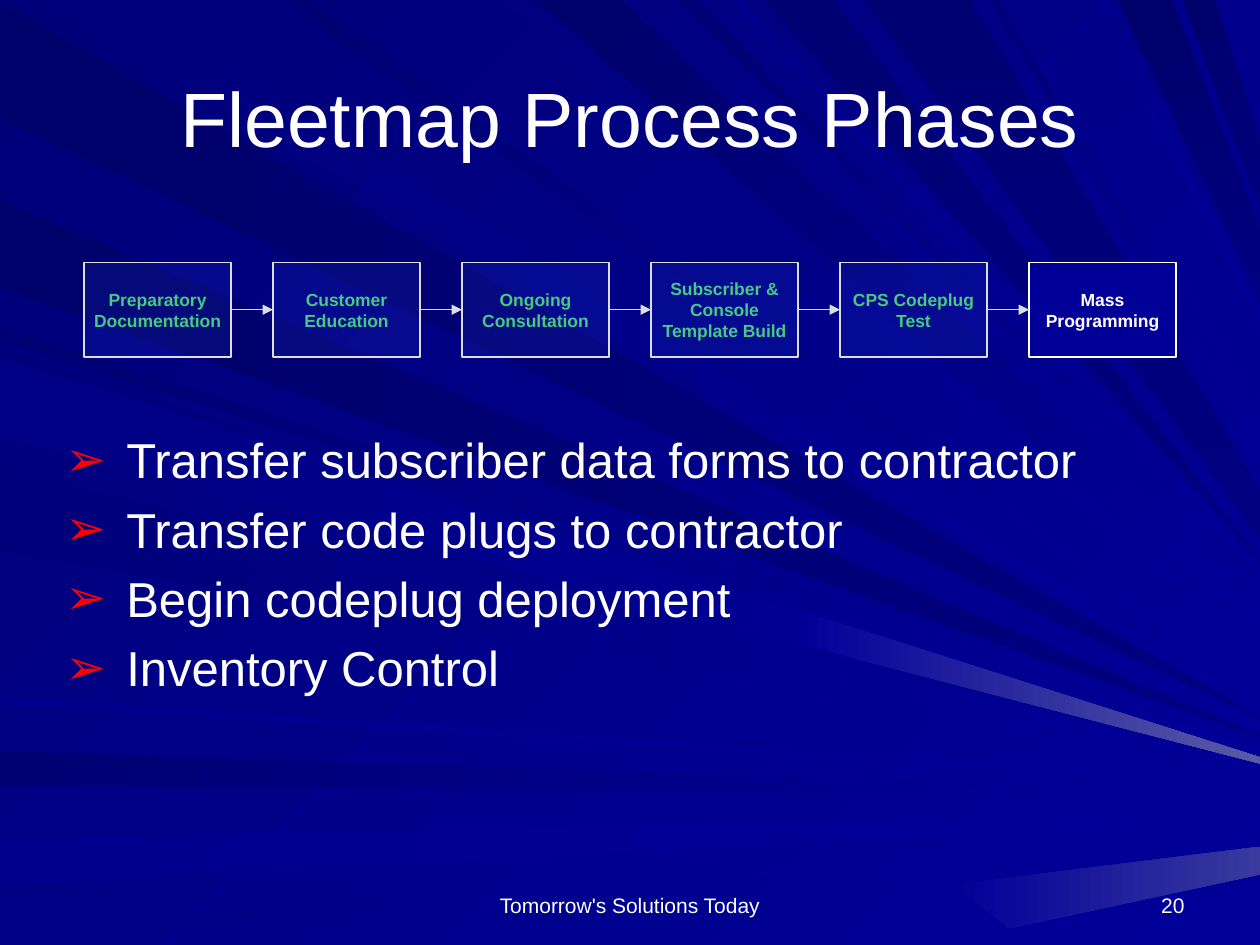
from itertools import pairwise

from lxml.etree import SubElement
from pptx import Presentation
from pptx.dml.color import RGBColor
from pptx.enum.shapes import MSO_CONNECTOR as Connector, MSO_SHAPE as Shape
from pptx.enum.text import MSO_ANCHOR as Anchor, MSO_AUTO_SIZE as AutoSize, PP_ALIGN as Align
from pptx.oxml.ns import qn
from pptx.util import Pt

COLORS = {
    "white": "FFFFFF",
    "edge": "DDDDDD",
    "phase_fill": "3366FF",
    "phase_text": "45C984",
    "bullet": "FF0000",
    "background": "000078",
    "darkest": "00006B",
    "dark": "000073",
    "deep": "00007B",
    "middle": "000080",
    "light": "000085",
    "lighter": "00008C",
    "bright": "000099",
    "glow_low": "39399E",
    "glow_high": "5A5AA6",
}
FONT = "Arial"
RAY_UNIT = Pt(0.72)
RIGHT = 1000

# Start and end on the slide's edge, tip on the right edge, tip height, colours
LEFT_RAYS = [
    (2, 93, 569, 1, "darkest", "middle"),
    (596, 623, 631, 1, "dark", "bright"),
    (665, 704, 643, 8, "lighter", "bright"),
    (735, 750, 662, 0, "light", "bright"),
    (258, 270, 589, 0, "dark", "bright"),
    (159, 228, 584, 1, "darkest", "middle"),
    (278, 342, 596, 6, "deep", "bright"),
    (374, 437, 605, 1, "deep", "bright"),
    (552, 560, 621, 2, "lighter", "bright"),
    (283, 347, 601, 5, "light", "bright"),
]
TOP_RAYS = [
    (26, 101, 562, 1, "deep", "bright"),
    (398, 416, 515, 6, "middle", "bright"),
    (426, 492, 479, 28, "darkest", "bright"),
    (540, 552, 463, 0, "dark", "bright"),
    (606, 661, 445, 1, "dark", "middle"),
    (887, 930, 183, 54, "darkest", "middle"),
    (939, 964, 114, 53, "darkest", "middle"),
    (225, 247, 547, 5, "dark", "bright"),
    (577, 588, 453, 1, "lighter", "bright"),
    (686, 770, 390, 38, "dark", "middle"),
    (785, 792, 354, 6, "background", "bright"),
    (815, 824, 335, 1, "light", "bright"),
    (865, 872, 249, 9, "lighter", "bright"),
]
GLOWS = [
    ([(637, 485), (633, 511), (RIGHT, 606), (RIGHT, 601)], "glow_high"),
    ([(756, 702), (801, 737), (RIGHT, 694), (RIGHT, 672)], "glow_low"),
]
PHASES = [
    "Preparatory Documentation",
    "Customer Education",
    "Ongoing Consultation",
    "Subscriber & Console Template Build",
    "CPS Codeplug Test",
    "Mass Programming",
]
STEPS = [
    "Transfer subscriber data forms to contractor",
    "Transfer code plugs to contractor",
    "Begin codeplug deployment",
    "Inventory Control",
]


def color(name):
    return RGBColor.from_string(COLORS[name])


def paint_gradient(fill, names, angle):
    fill.gradient()
    fill.gradient_angle = (360 - angle) % 360
    for stop, name in zip(fill.gradient_stops, names):
        stop.color.rgb = color(name)


def place(shape, left, top, width, height):
    shape.left, shape.top, shape.width, shape.height = map(Pt, (left, top, width, height))


def add_bullet(paragraph, symbol, indent):
    properties = paragraph._p.get_or_add_pPr()
    properties.set("marL", str(Pt(indent)))
    properties.set("indent", str(-Pt(indent)))
    bullet_color = SubElement(properties, qn("a:buClr"))
    SubElement(bullet_color, qn("a:srgbClr"), val=COLORS["bullet"])
    SubElement(properties, qn("a:buFont"), typeface=FONT)
    SubElement(properties, qn("a:buChar"), char=symbol)


def write_text(shape, lines, size=12, ink="white", bold=False, align=Align.LEFT,
               anchor=Anchor.TOP, bullet=None, gap=0):
    frame = shape.text_frame
    frame.word_wrap = True
    frame.auto_size = AutoSize.NONE
    frame.vertical_anchor = anchor
    frame.text = "\n".join(lines)
    for index, paragraph in enumerate(frame.paragraphs):
        paragraph.alignment = align
        paragraph.space_before = Pt(gap if index else 0)
        if bullet:
            add_bullet(paragraph, bullet, 35)
        font = paragraph.runs[0].font
        font.name, font.size, font.bold = FONT, Pt(size), bold
        font.color.rgb = color(ink)


def add_ray(group, outline, names, angle=0):
    builder = group.shapes.build_freeform(*outline[0], scale=RAY_UNIT)
    builder.add_line_segments(outline[1:], close=True)
    ray = builder.convert_to_shape()
    ray.shadow.inherit = False
    ray.line.fill.background()
    paint_gradient(ray.fill, names, angle)


def add_rays(slide):
    group = slide.shapes.add_group_shape()
    for start, end, tip, height, *names in LEFT_RAYS:
        add_ray(group, [(0, start), (0, end), (RIGHT, tip + height), (RIGHT, tip)], names)
    for start, end, tip, height, *names in TOP_RAYS:
        angle = 45 if names[-1] == "bright" else 90
        add_ray(group, [(start, 0), (end, 0), (RIGHT, tip), (RIGHT, tip + height)], names, angle)
    for outline, glow in GLOWS:
        add_ray(group, outline, ["bright", glow])
    slide.shapes.element.insert(2, group.element)


def add_phase(slide, index, label, current):
    box = slide.shapes.add_shape(Shape.RECTANGLE, Pt(48 + 108 * index), Pt(150), Pt(84), Pt(54))
    box.shadow.inherit = False
    box.fill.solid()
    box.fill.fore_color.rgb = color("bright" if current else "phase_fill")
    if not current:
        tint = box.element.spPr.find(qn("a:solidFill"))[0]
        SubElement(tint, qn("a:alpha"), val="10000")
    box.line.color.rgb = color("white" if current else "edge")
    box.line.width = Pt(0.75)
    frame = box.text_frame
    frame.margin_left = frame.margin_top = frame.margin_right = frame.margin_bottom = Pt(3.6)
    write_text(box, [label], size=10, ink="white" if current else "phase_text", bold=True,
               align=Align.CENTER, anchor=Anchor.MIDDLE)
    return box


def add_arrow(slide, source, target):
    arrow = slide.shapes.add_connector(Connector.STRAIGHT, 0, 0, 0, 0)
    arrow.begin_connect(source, 3)
    arrow.end_connect(target, 1)
    arrow.line.color.rgb = color("edge")
    arrow.line.width = Pt(0.75)
    SubElement(arrow.element.spPr.find(qn("a:ln")), qn("a:tailEnd"), type="triangle")
    SubElement(arrow.element.spPr, qn("a:effectLst"))


def add_label(slide, text, bounds, align):
    label = slide.shapes.add_textbox(*map(Pt, bounds))
    write_text(label, [text], align=align, anchor=Anchor.BOTTOM)


def main():
    presentation = Presentation()
    presentation.slide_width, presentation.slide_height = Pt(720), Pt(540)
    slide = presentation.slides.add_slide(presentation.slide_layouts[1])
    paint_gradient(slide.background.fill, ["background", "bright"], 45)
    add_rays(slide)

    title, body = slide.placeholders
    place(title, 36, 21.6, 648, 90)
    write_text(title, ["Fleetmap Process Phases"], size=44, align=Align.CENTER, anchor=Anchor.MIDDLE)
    place(body, 30, 242, 648, 240)
    write_text(body, STEPS, size=28, bullet="➢", gap=6)

    boxes = [add_phase(slide, index, label, label == PHASES[-1]) for index, label in enumerate(PHASES)]
    for source, target in pairwise(boxes):
        add_arrow(slide, source, target)

    add_label(slide, "20", (516, 492, 168, 36), Align.RIGHT)
    add_label(slide, "Tomorrow's Solutions Today", (246, 492, 228, 36), Align.CENTER)
    presentation.save("out.pptx")


if __name__ == "__main__":
    main()
